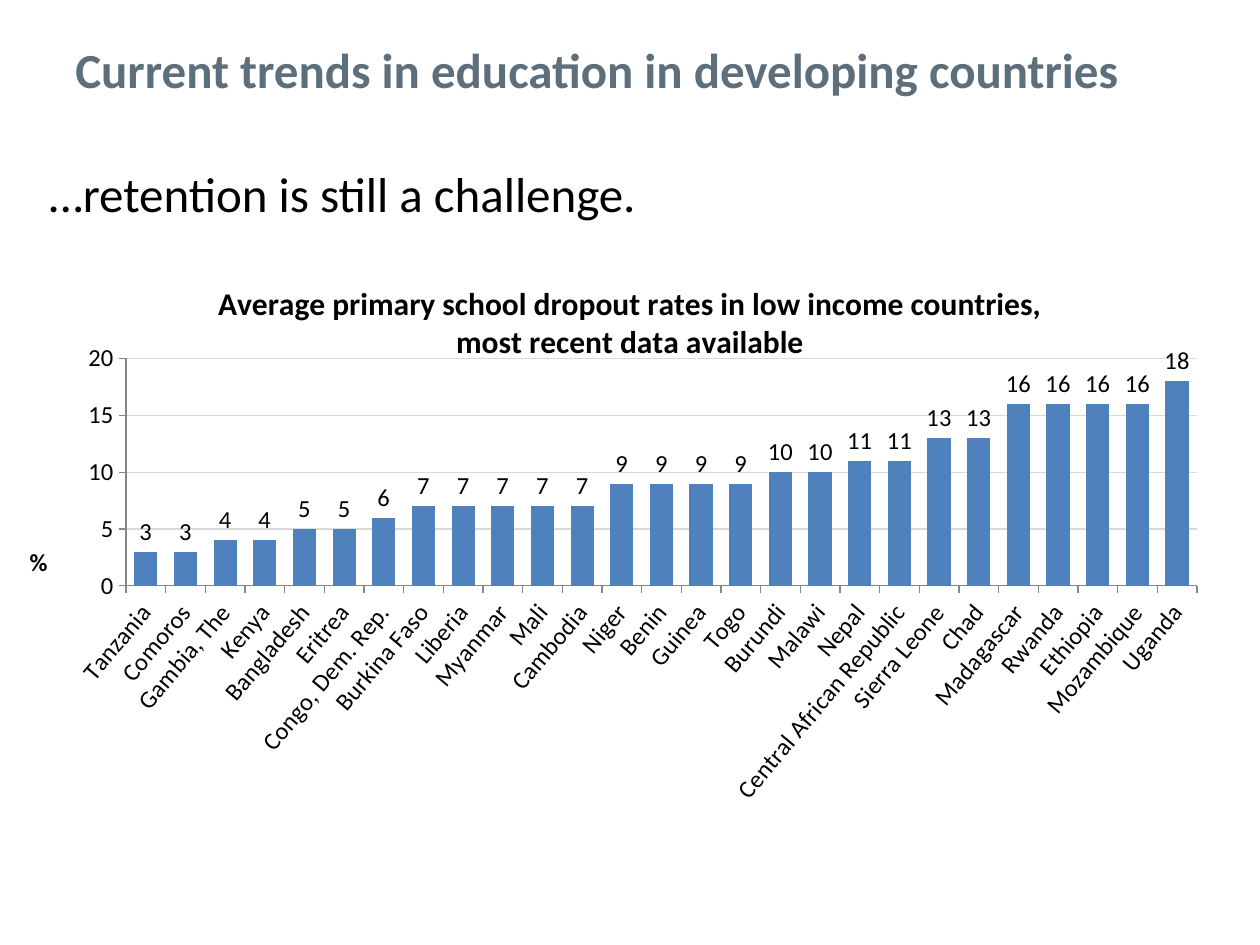
import pptx
import pptx.chart.data
import pptx.dml.color
import pptx.enum.chart
import pptx.enum.text
import pptx.oxml
import pptx.oxml.ns
import pptx.util
from pptx.util import Cm, Pt

THEME = {
    "font": "Calibri",
    "heading": "5C6F7A", "text": "000000", "bar": "4F81BD",
    "grid": "D9D9D9", "axis": "868686",
    "text_size": 28, "chart_title_size": 18, "label_size": 14, "chart_size": 10,
}

HEADING = "Current trends in education in developing countries"
MESSAGE = "…retention is still a challenge."
CHART_TITLE = [
    "Average primary school dropout rates in low income countries,",
    "most recent data available",
]
UNIT = "%"
DROPOUT_RATES = {
    "Tanzania": 3, "Comoros": 3, "Gambia, The": 4, "Kenya": 4,
    "Bangladesh": 5, "Eritrea": 5, "Congo, Dem. Rep.": 6,
    "Burkina Faso": 7, "Liberia": 7, "Myanmar": 7, "Mali": 7, "Cambodia": 7,
    "Niger": 9, "Benin": 9, "Guinea": 9, "Togo": 9,
    "Burundi": 10, "Malawi": 10, "Nepal": 11, "Central African Republic": 11,
    "Sierra Leone": 13, "Chad": 13, "Madagascar": 16, "Rwanda": 16,
    "Ethiopia": 16, "Mozambique": 16, "Uganda": 18,
}


def color(name):
    return pptx.dml.color.RGBColor.from_string(THEME[name])


def style_font(font, size, color_name="text", bold=False):
    font.name = THEME["font"]
    font.size = Pt(THEME[size])
    font.bold = bold
    font.color.rgb = color(color_name)


def style_line(line, color_name):
    line.color.rgb = color(color_name)
    line.width = Pt(0.75)


def add_text(page, text, left, top, width, height, anchor, color_name, bold=False):
    box = page.shapes.add_textbox(Cm(left), Cm(top), Cm(width), Cm(height))
    frame = box.text_frame
    frame.word_wrap = True
    frame.vertical_anchor = anchor
    para = frame.paragraphs[0]
    para.text = text
    style_font(para.font, "text_size", color_name, bold)


def set_layout(element, index, **fractions):
    """Place a chart part by fractions of the chart's width and height."""
    for old in element.findall(pptx.oxml.ns.qn("c:layout")):
        element.remove(old)
    target = '<c:layoutTarget val="inner"/>' if "w" in fractions else ""
    modes = "".join(f'<c:{key}Mode val="edge"/>' for key in "xy")
    places = "".join(f'<c:{key} val="{value}"/>' for key, value in fractions.items())
    element.insert(index, pptx.oxml.parse_xml(
        f'<c:layout {pptx.oxml.ns.nsdecls("c")}><c:manualLayout>'
        f'{target}{modes}{places}</c:manualLayout></c:layout>'))


def fill_title(title, lines, size, x, y):
    frame = title.text_frame
    frame.text = "\n".join(lines)
    for para in frame.paragraphs:
        style_font(para.font, size, bold=True)
    set_layout(title._element, 1, x=x, y=y)


def rotate(body, degrees):
    body.set("rot", str(degrees * 60000))
    body.set("vert", "horz")


def add_dropout_chart(page):
    data = pptx.chart.data.CategoryChartData(number_format="#,##0")
    data.categories = list(DROPOUT_RATES)
    data.add_series("Dropout rate", list(DROPOUT_RATES.values()))
    chart = page.shapes.add_chart(
        pptx.enum.chart.XL_CHART_TYPE.COLUMN_CLUSTERED,
        Cm(0), Cm(5.05), Cm(25.4), Cm(11.46), data).chart
    style_font(chart.font, "chart_size")
    chart.has_legend = False
    chart.has_title = True
    fill_title(chart.chart_title, CHART_TITLE, "chart_title_size", 0.17, 0.05)
    chart.chart_title.include_in_layout = True
    set_layout(chart._chartSpace.chart.plotArea, 0, x=0.1, y=0.19, w=0.85, h=0.4)

    plot = chart.plots[0]
    plot.gap_width = 71
    plot.vary_by_categories = False
    series = plot.series[0]
    series.format.fill.solid()
    series.format.fill.fore_color.rgb = color("bar")
    plot.has_data_labels = True
    labels = plot.data_labels
    labels.show_value = True
    labels.number_format = "#,##0"
    labels.number_format_is_linked = False
    labels.position = pptx.enum.chart.XL_LABEL_POSITION.OUTSIDE_END
    style_font(labels.font, "label_size")

    for axis in (chart.category_axis, chart.value_axis):
        axis.major_tick_mark = pptx.enum.chart.XL_TICK_MARK.OUTSIDE
        axis.minor_tick_mark = pptx.enum.chart.XL_TICK_MARK.NONE
        style_font(axis.tick_labels.font, "label_size")
        style_line(axis.format.line, "axis")
    rotate(chart.category_axis._element.txPr.bodyPr, -50)

    rates = chart.value_axis
    rates.minimum_scale, rates.maximum_scale, rates.major_unit = 0, 20, 5
    rates.has_major_gridlines = True
    style_line(rates.major_gridlines.format.line, "grid")
    rates.has_title = True
    fill_title(rates.axis_title, [UNIT], "label_size", 0.02, 0.51)
    rotate(rates.axis_title.text_frame._txBody.bodyPr, 0)


def main():
    deck = pptx.Presentation()
    deck.slide_width, deck.slide_height = Cm(25.4), Cm(19.05)
    page = deck.slides.add_slide(deck.slide_layouts[6])
    anchors = pptx.enum.text.MSO_ANCHOR
    add_text(page, HEADING, 1.27, 0, 21.77, 2.77, anchors.MIDDLE, "heading", bold=True)
    add_text(page, MESSAGE, 0.74, 3.18, 23.44, 1.65, anchors.TOP, "text")
    add_dropout_chart(page)
    deck.save("out.pptx")


if __name__ == "__main__":
    main()
